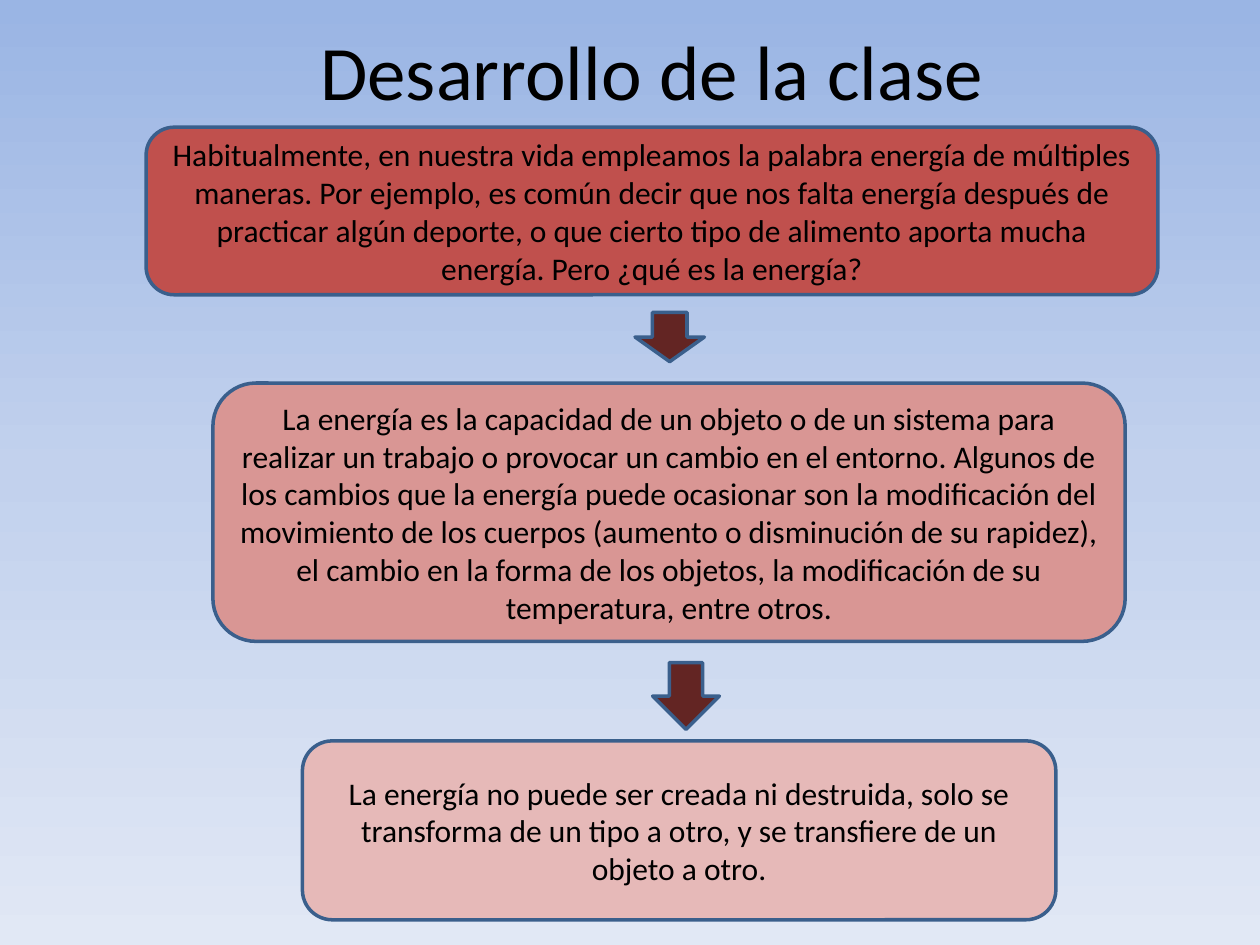
from lxml import etree
from pptx import Presentation
from pptx.dml.color import RGBColor
from pptx.enum.shapes import MSO_SHAPE
from pptx.enum.text import MSO_ANCHOR, PP_ALIGN
from pptx.oxml.ns import qn
from pptx.util import Inches, Pt

ROUNDED = MSO_SHAPE.ROUNDED_RECTANGLE
DOWN_ARROW = MSO_SHAPE.DOWN_ARROW
MIDDLE = MSO_ANCHOR.MIDDLE
CENTER = PP_ALIGN.CENTER

FONT = "Calibri"
BLACK = "000000"
OUTLINE = "3A5F8C"
ARROW_FILL = "632523"
SKY = [(0, "9AB5E4"), (50, "C2D1ED"), (100, "E1E8F5")]

# Each step: box, fill, paragraphs
STEPS = [
    ((1.16, 1.01, 8.03, 1.33), "C0504D", [
        "Habitualmente, en nuestra vida empleamos la palabra energía de múltiples",
        "maneras. Por ejemplo, es común decir que nos falta energía después de",
        "practicar algún deporte, o que cierto tipo de alimento aporta mucha "
        "energía. Pero ¿qué es la energía?",
    ]),
    ((1.69, 3.04, 7.24, 2.05), "D99694", [
        "La energía es la capacidad de un objeto o de un sistema para realizar un "
        "trabajo o provocar un cambio en el entorno. Algunos de los cambios que la "
        "energía puede ocasionar son la modificación del movimiento de los cuerpos "
        "(aumento o disminución de su rapidez), el cambio en la forma de los "
        "objetos, la modificación de su temperatura, entre otros.",
    ]),
    ((2.4, 5.88, 5.98, 1.42), "E6B9B8", [
        "La energía no puede ser creada ni destruida, solo se transforma de un "
        "tipo a otro, y se transfiere de un objeto a otro.",
    ]),
]
ARROWS = [(5.04, 2.48, 0.55, 0.39), (5.18, 5.26, 0.53, 0.53)]


def color(value):
    return RGBColor.from_string(value)


def paint_background(page, stops):
    fill = page.background.fill
    fill.gradient()
    fill.gradient_angle = 270  # counter-clockwise: top to bottom
    stop_list = next(page.element.iter(qn("a:gsLst")))
    for stop in list(stop_list):
        stop_list.remove(stop)
    for percent, value in stops:
        stop = etree.SubElement(stop_list, qn("a:gs"), pos=str(percent * 1000))
        etree.SubElement(stop, qn("a:srgbClr"), val=value)


def write(frame, paragraphs, size):
    frame.word_wrap = True
    frame.vertical_anchor = MIDDLE
    for index, text in enumerate(paragraphs):
        para = frame.add_paragraph() if index else frame.paragraphs[0]
        para.alignment = CENTER
        span = para.add_run()
        span.text = text
        span.font.name = FONT
        span.font.size = Pt(size)
        span.font.color.rgb = color(BLACK)


def place_title(page, box, text):
    title = page.shapes.title
    title.left, title.top, title.width, title.height = map(Inches, box)
    write(title.text_frame, [text], 44)


def add_outlined(page, kind, box, fill):
    shape = page.shapes.add_shape(kind, *map(Inches, box))
    shape.shadow.inherit = False
    shape.fill.solid()
    shape.fill.fore_color.rgb = color(fill)
    shape.line.color.rgb = color(OUTLINE)
    shape.line.width = Pt(2)
    return shape


def add_step(page, box, fill, paragraphs):
    shape = add_outlined(page, ROUNDED, box, fill)
    write(shape.text_frame, paragraphs, 18)


def main():
    deck = Presentation()
    deck.slide_width, deck.slide_height = Inches(10), Inches(7.5)
    page = deck.slides.add_slide(deck.slide_layouts[5])  # title only

    paint_background(page, SKY)
    place_title(page, (2.28, 0.11, 5.79, 0.89), "Desarrollo de la clase")

    # Chain of ideas
    for box, fill, paragraphs in STEPS:
        add_step(page, box, fill, paragraphs)
    for box in ARROWS:
        add_outlined(page, DOWN_ARROW, box, ARROW_FILL)

    deck.save("out.pptx")


if __name__ == "__main__":
    main()
